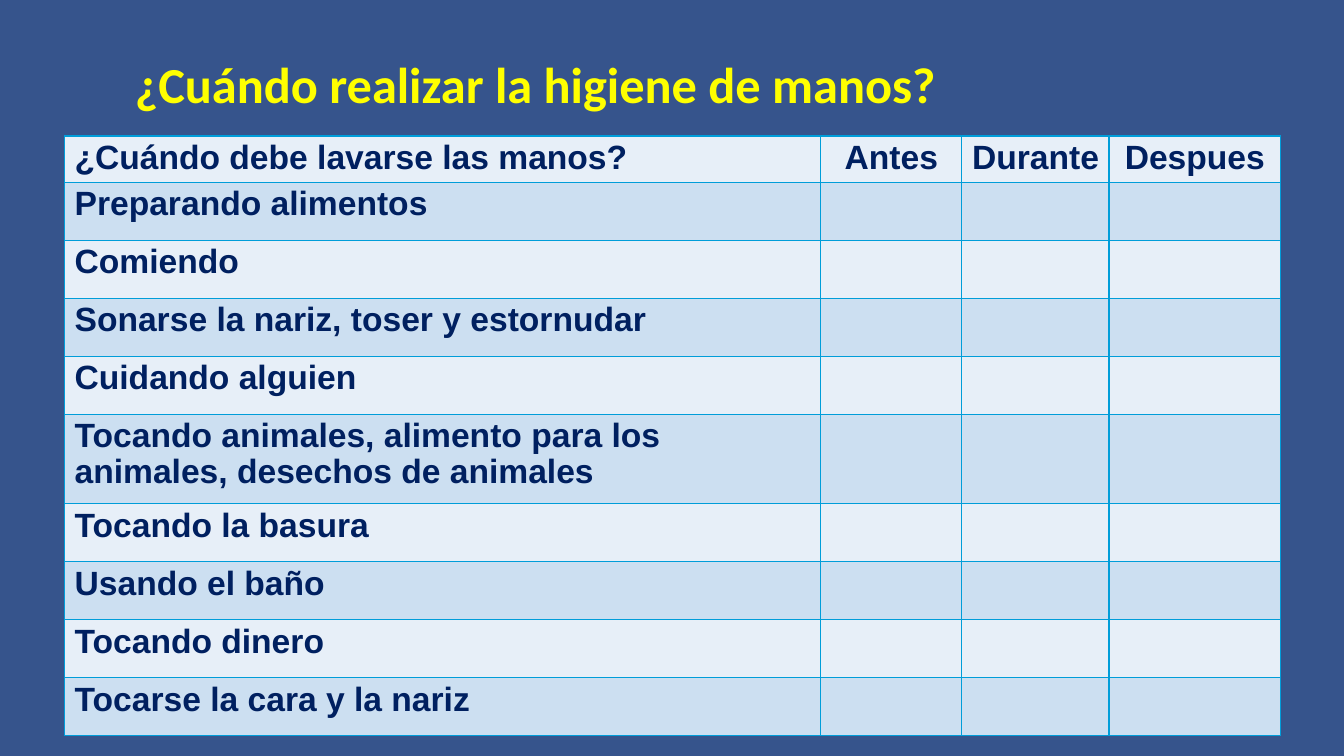
from dataclasses import dataclass

from lxml import etree
from pptx import Presentation
from pptx import util as u
from pptx.dml.color import RGBColor
from pptx.enum import text
from pptx.oxml import ns


@dataclass(frozen=True)
class Theme:
    background: str = "36548C"
    title_color: str = "FFFF00"
    table_text: str = "002060"
    light_row: str = "E7EFF8"
    dark_row: str = "CCDFF1"
    border: str = "009DD9"
    title_font: str = "Calibri"
    table_font: str = "Arial"
    title_size: int = 36
    table_size: int = 24
    border_width: int = 1
    line_spacing: float = 0.95


THEME = Theme()
HEADINGS = ["¿Cuándo debe lavarse las manos?", "Antes", "Durante", "Despues"]
MOMENTS = [
    "Preparando alimentos",
    "Comiendo",
    "Sonarse la nariz, toser y estornudar",
    "Cuidando alguien",
    "Tocando animales, alimento para los animales, desechos de animales",
    "Tocando la basura",
    "Usando el baño",
    "Tocando dinero",
    "Tocarse la cara y la nariz",
]
COLUMN_WIDTHS = [7.5, 1.4, 1.46, 1.7]
HEADER_HEIGHT, ROW_HEIGHT, TALL_ROW_HEIGHT = 0.46, 0.575, 0.89
TALL_ROW = 5


def format_text(paragraph, font_name, size, color):
    for run in paragraph.runs:
        run.font.name = font_name
        run.font.size = u.Pt(size)
        run.font.bold = True
        run.font.color.rgb = RGBColor.from_string(color)


def add_title(slide, left, top, width, height):
    box = slide.shapes.add_textbox(*map(u.Inches, (left, top, width, height)))
    frame = box.text_frame
    frame.word_wrap = True
    frame.text = "¿Cuándo realizar la higiene de manos?"
    format_text(frame.paragraphs[0], THEME.title_font, THEME.title_size, THEME.title_color)


def set_borders(cell):
    properties = cell._tc.get_or_add_tcPr()
    for position, side in enumerate(("lnL", "lnR", "lnT", "lnB")):
        line = etree.Element(ns.qn(f"a:{side}"), w=str(u.Pt(THEME.border_width)))
        fill = etree.SubElement(line, ns.qn("a:solidFill"))
        etree.SubElement(fill, ns.qn("a:srgbClr"), val=THEME.border)
        # Lines come before the fill in the cell properties
        properties.insert(position, line)


def fill_cell(cell, words, color, centered):
    cell.fill.solid()
    cell.fill.fore_color.rgb = RGBColor.from_string(color)
    set_borders(cell)
    if words:
        cell.text_frame.text = words
        paragraph = cell.text_frame.paragraphs[0]
        paragraph.line_spacing = THEME.line_spacing
        if centered:
            paragraph.alignment = text.PP_ALIGN.CENTER
        format_text(paragraph, THEME.table_font, THEME.table_size, THEME.table_text)


def add_moments_table(slide, left, top, width, height):
    rows = [HEADINGS] + [[moment, "", "", ""] for moment in MOMENTS]
    frame = slide.shapes.add_table(
        len(rows), len(HEADINGS), *map(u.Inches, (left, top, width, height)))
    table = frame.table
    table.first_row = table.horz_banding = False

    # Column and row sizes
    for column, column_width in zip(table.columns, COLUMN_WIDTHS):
        column.width = u.Inches(column_width)
    for row in table.rows:
        row.height = u.Inches(ROW_HEIGHT)
    table.rows[0].height = u.Inches(HEADER_HEIGHT)
    table.rows[TALL_ROW].height = u.Inches(TALL_ROW_HEIGHT)

    # Alternating rows
    for row_index, row in enumerate(rows):
        color = THEME.dark_row if row_index % 2 else THEME.light_row
        for column_index, words in enumerate(row):
            fill_cell(table.cell(row_index, column_index), words, color, column_index > 0)


def main():
    presentation = Presentation()
    presentation.slide_width = u.Inches(13.33)
    presentation.slide_height = u.Inches(7.5)
    slide = presentation.slides.add_slide(presentation.slide_layouts[6])
    slide.background.fill.solid()
    slide.background.fill.fore_color.rgb = RGBColor.from_string(THEME.background)
    add_moments_table(slide, 0.64, 1.35, sum(COLUMN_WIDTHS), 5.95)
    add_title(slide, 1.24, 0.48, 10.53, 0.71)
    presentation.save("out.pptx")


if __name__ == "__main__":
    main()
